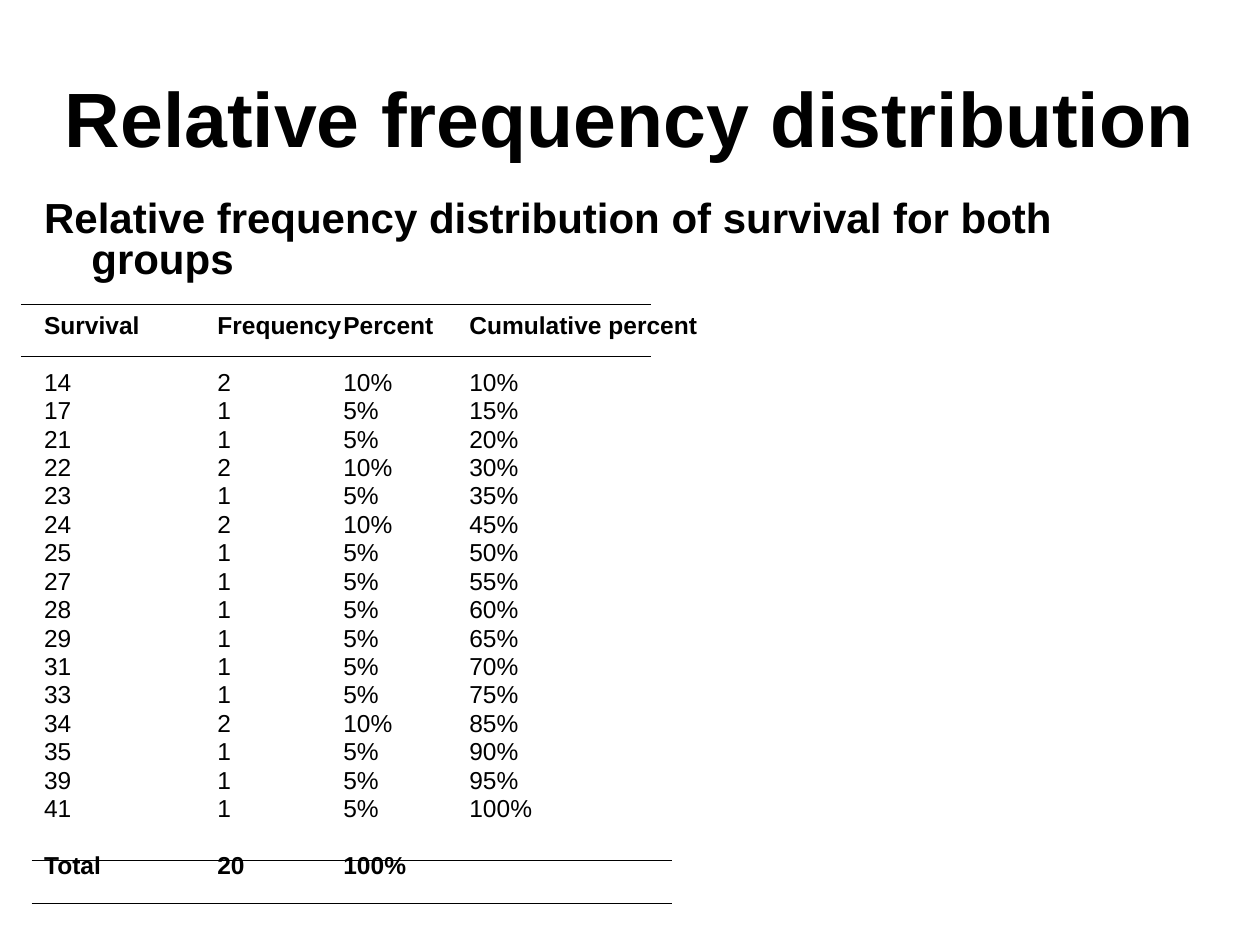
from dataclasses import dataclass

from lxml import etree
from pptx import Presentation
from pptx.dml.color import RGBColor
from pptx.enum.shapes import MSO_CONNECTOR
from pptx.enum.text import MSO_ANCHOR, MSO_AUTO_SIZE, PP_ALIGN
from pptx.oxml.ns import qn
from pptx.util import Pt

STRAIGHT = MSO_CONNECTOR.STRAIGHT
MIDDLE, TOP = MSO_ANCHOR.MIDDLE, MSO_ANCHOR.TOP
CENTER, LEFT = PP_ALIGN.CENTER, PP_ALIGN.LEFT
NO_AUTOFIT = MSO_AUTO_SIZE.NONE


@dataclass(frozen=True)
class Theme:
    font: str = "Arial"
    ink: RGBColor = RGBColor(0, 0, 0)
    title_size: float = 44
    heading_size: float = 24
    table_size: float = 14
    rule_width: float = 0.75
    line_spacing: float = 0.8
    heading_gap: float = 4.8
    row_gap: float = 2.8
    section_gap: float = 19.06
    hanging: float = 27
    tab_size: float = 72


THEME = Theme()
TITLE = "Relative frequency distribution"
HEADING = "Relative frequency distribution of survival for both groups"
COLUMNS = ("Survival", "Frequency", "Percent", "Cumulative percent")
FREQUENCIES = {
    14: 2, 17: 1, 21: 1, 22: 2, 23: 1, 24: 2, 25: 1, 27: 1,
    28: 1, 29: 1, 31: 1, 33: 1, 34: 2, 35: 1, 39: 1, 41: 1,
}
# left, right, y
RULES = ((12, 372, 174), (12, 372, 203.8), (18, 384, 491.8), (18, 384, 516.2))


def place(placeholder, left, top, width, height, anchor):
    placeholder.left, placeholder.top = Pt(left), Pt(top)
    placeholder.width, placeholder.height = Pt(width), Pt(height)
    frame = placeholder.text_frame
    frame.word_wrap = True
    frame.auto_size = NO_AUTOFIT
    frame.vertical_anchor = anchor
    return frame


def write(paragraph, text, size, bold, align=LEFT):
    paragraph.text = text
    paragraph.alignment = align
    for run in paragraph.runs:
        run.font.name = THEME.font
        run.font.size = Pt(size)
        run.font.bold = bold
        run.font.color.rgb = THEME.ink


def set_layout(paragraph, space_before):
    """Set spacing, the hanging indent, the tab interval and no bullet."""
    paragraph.line_spacing = THEME.line_spacing
    paragraph.space_before = Pt(space_before)
    properties = paragraph._p.get_or_add_pPr()
    properties.set("marL", str(Pt(THEME.hanging)))
    properties.set("indent", str(-Pt(THEME.hanging)))
    properties.set("defTabSz", str(Pt(THEME.tab_size)))
    etree.SubElement(properties, qn("a:buNone"))


def add_row(frame, cells, bold=False, space_before=THEME.row_gap):
    row = frame.add_paragraph()
    write(row, "\t".join(cells), THEME.table_size, bold)
    set_layout(row, space_before)


def add_frequency_rows(frame):
    total = sum(FREQUENCIES.values())
    add_row(frame, COLUMNS, True, THEME.section_gap)
    cumulative = 0
    for survival, frequency in FREQUENCIES.items():
        gap = THEME.row_gap if cumulative else THEME.section_gap
        cumulative += frequency
        # A short value ends before the indent, which is itself a tab stop.
        cells = (f"{survival}\t", str(frequency),
                 f"{frequency / total:.0%}", f"{cumulative / total:.0%}")
        add_row(frame, cells, space_before=gap)
    add_row(frame, ("Total", str(total), "100%"), True, THEME.section_gap)


def add_rule(slide, left, right, y):
    rule = slide.shapes.add_connector(STRAIGHT, Pt(left), Pt(y), Pt(right), Pt(y))
    rule.line.color.rgb = THEME.ink
    rule.line.width = Pt(THEME.rule_width)
    etree.SubElement(rule._element.spPr, qn("a:effectLst"))


def main():
    presentation = Presentation()
    presentation.slide_width, presentation.slide_height = Pt(720), Pt(540)
    slide = presentation.slides.add_slide(presentation.slide_layouts[1])
    title, body = slide.placeholders

    title_frame = place(title, 18, 21.6, 684, 90, MIDDLE)
    write(title_frame.paragraphs[0], TITLE, THEME.title_size, True, CENTER)

    body_frame = place(body, 18, 111.6, 666, 408, TOP)
    heading = body_frame.paragraphs[0]
    write(heading, HEADING, THEME.heading_size, True)
    set_layout(heading, THEME.heading_gap)
    add_frequency_rows(body_frame)

    for left, right, y in RULES:
        add_rule(slide, left, right, y)
    presentation.save("out.pptx")


if __name__ == "__main__":
    main()
